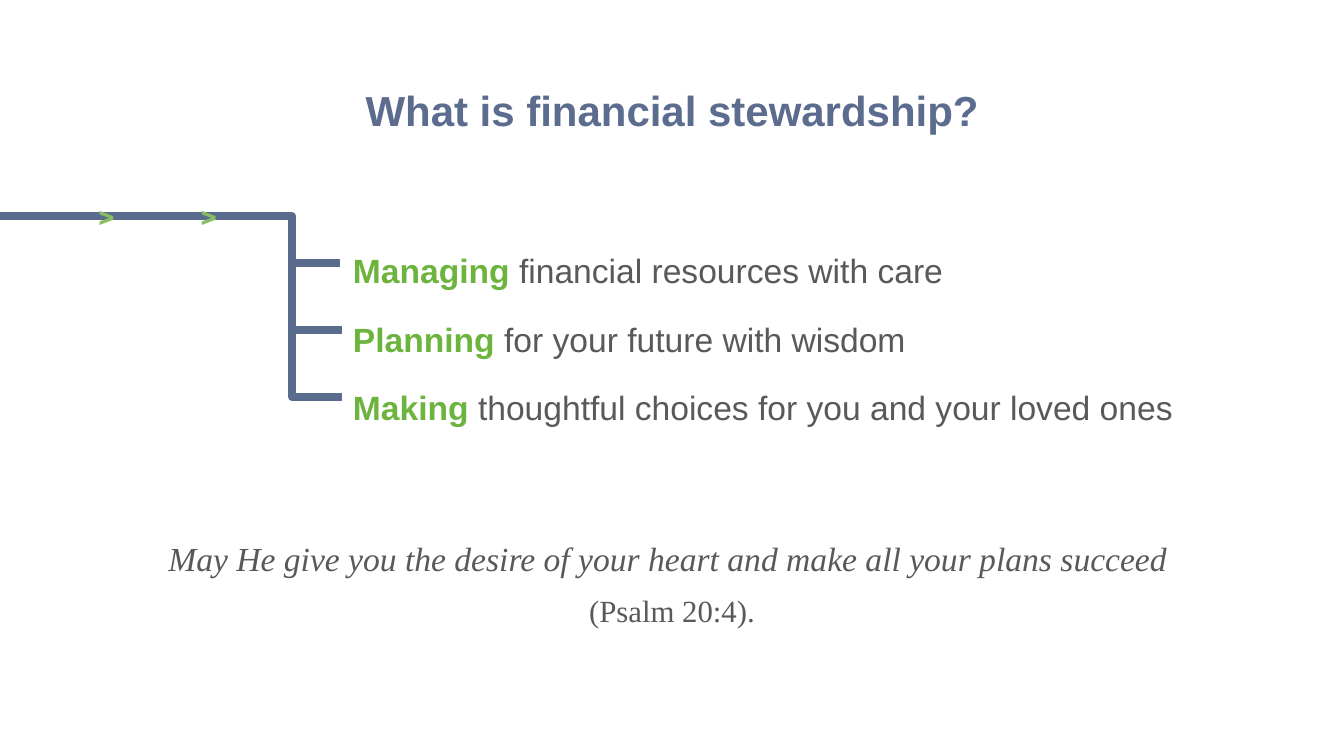
import pptx
import pptx.dml.color
import pptx.enum.text
import pptx.util

EMU_PER_PX = 914400 / 100.8
SLATE, TITLE_BLUE = "596C8E", "5C6C8E"
GREEN, LIGHT_GREEN, GREY = "6DB43E", "88BE5F", "595959"
CENTER = pptx.enum.text.PP_ALIGN.CENTER
LEFT = pptx.enum.text.PP_ALIGN.LEFT


def px(n):
    return pptx.util.Emu(round(n * EMU_PER_PX))


def rgb(value):
    return pptx.dml.color.RGBColor.from_string(value)


def add_run(p, text, size=24, color=GREY, font="Arial", bold=False, italic=False):
    r = p.add_run()
    r.text = text
    r.font.name = font
    r.font.size = pptx.util.Pt(size)
    r.font.bold = bold
    r.font.italic = italic
    r.font.color.rgb = rgb(color)


class Deck:
    def __init__(self, width, height):
        self.prs = pptx.Presentation()
        self.prs.slide_width, self.prs.slide_height = px(width), px(height)
        self.s = None

    def add_slide(self):
        self.s = self.prs.slides.add_slide(self.prs.slide_layouts[5])

    def fill_text(self, sp, paragraphs, align=LEFT, spacing=1.0, after=0, inset=(0, 0)):
        """Write paragraphs, each a list of (text, format) runs."""
        tf = sp.text_frame
        tf.word_wrap = True
        tf.auto_size = pptx.enum.text.MSO_AUTO_SIZE.NONE
        tf.margin_left = tf.margin_right = px(inset[0])
        tf.margin_top = tf.margin_bottom = px(inset[1])
        for i, runs in enumerate(paragraphs):
            p = tf.add_paragraph() if i else tf.paragraphs[0]
            p.alignment = align
            p.line_spacing = spacing
            p.space_before = pptx.util.Pt(0)
            p.space_after = pptx.util.Pt(after)
            for text, style in runs:
                add_run(p, text, **style)

    def title(self, box, text):
        sp = self.s.shapes.title
        sp.left, sp.top, sp.width, sp.height = map(px, box)
        style = dict(size=30, color=TITLE_BLUE, bold=True)
        self.fill_text(sp, [[(text, style)]], align=CENTER, spacing=0.9, inset=(10, 5))
        sp.text_frame.vertical_anchor = pptx.enum.text.MSO_ANCHOR.MIDDLE

    def text(self, box, paragraphs, **layout):
        sp = self.s.shapes.add_textbox(*map(px, box))
        self.fill_text(sp, paragraphs, **layout)

    def polyline(self, points, color=SLATE, width=5.29):
        builder = self.s.shapes.build_freeform(*points[0], scale=EMU_PER_PX)
        builder.add_line_segments(points[1:], close=False)
        sp = builder.convert_to_shape()
        sp.shadow.inherit = False
        sp.fill.background()
        sp.line.color.rgb = rgb(color)
        sp.line.width = pptx.util.Pt(width)


def main():
    deck = Deck(1344, 756)
    deck.add_slide()
    deck.title((93, 40, 1159, 146), "What is financial stewardship?")

    duties = [
        ("Managing ", "financial resources with care"),
        ("Planning ", "for your future with wisdom"),
        ("Making ", "thoughtful choices for you and your loved ones"),
    ]
    deck.text(
        (353, 222, 828, 208),
        [[(verb, dict(color=GREEN, bold=True)), (rest, {})] for verb, rest in duties],
        spacing=1.7,
    )

    trunk = 292
    deck.polyline([(0, 216), (trunk, 216), (trunk, 263), (340, 263)])
    for branch_y in (330, 397):
        deck.polyline([(trunk, branch_y - 90), (trunk, branch_y), (342, branch_y)])

    arrow = dict(size=20.6, color=LIGHT_GREEN, font="Montserrat", bold=True)
    for x in (98, 200):
        deck.text((x, 200, 19, 35), [[(">", arrow)]], spacing=pptx.util.Pt(24.5))

    serif = dict(font="Times New Roman")
    verse = "May He give you the desire of your heart and make all your plans succeed "
    deck.text(
        (152, 530, 1040, 109),
        [[(verse, dict(serif, italic=True))], [("(Psalm 20:4).", dict(serif, size=22))]],
        align=CENTER, spacing=1.07, after=8, inset=(10, 5),
    )
    deck.prs.save("out.pptx")


if __name__ == "__main__":
    main()
